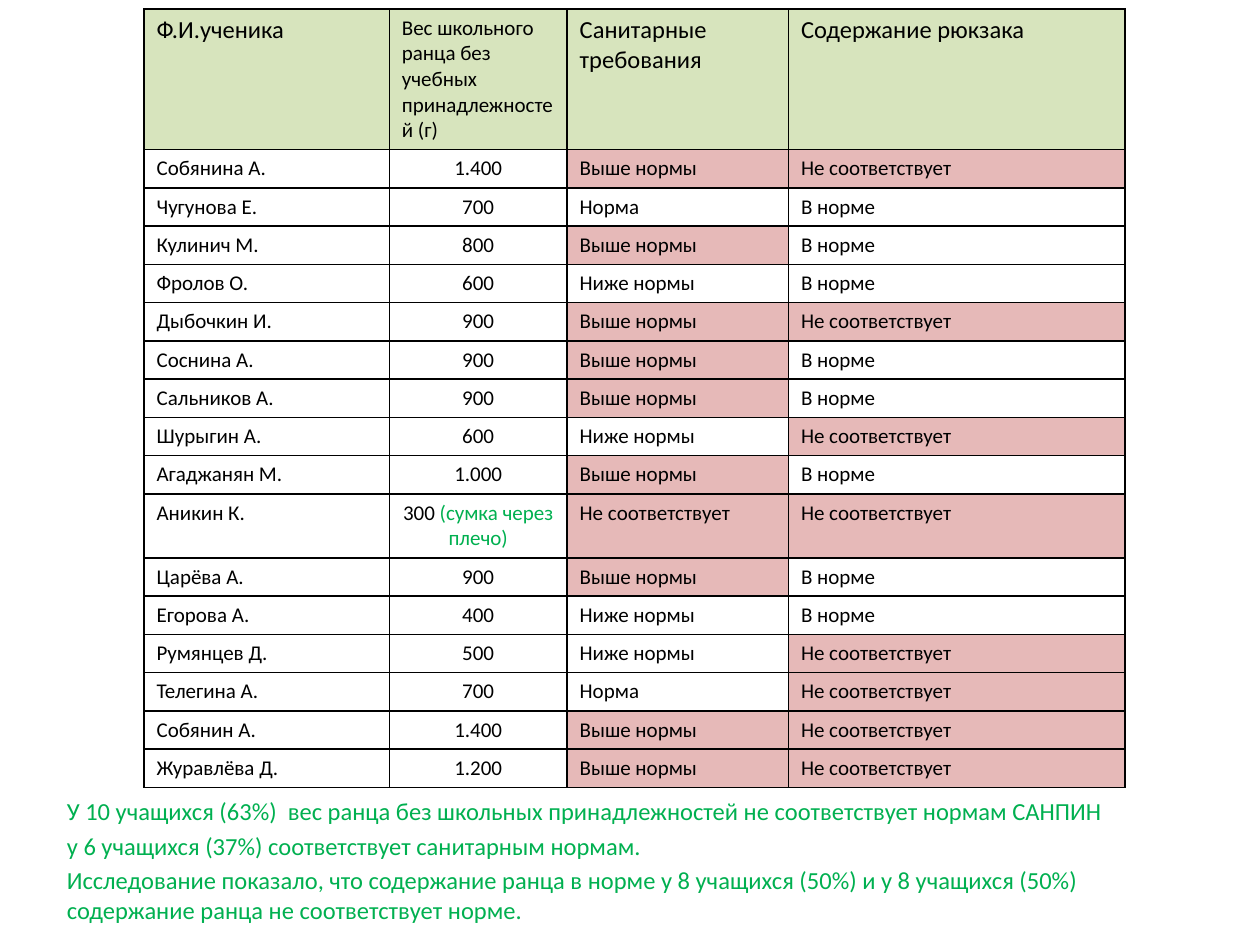
from dataclasses import dataclass

from lxml import etree
from pptx import Presentation
from pptx.dml.color import RGBColor
from pptx.enum import text
from pptx.oxml import ns
from pptx.util import Pt


@dataclass(frozen=True)
class Theme:
    font: str = "Calibri"
    large: float = 14
    small: float = 12
    ink: str = "000000"
    accent: str = "00B050"
    header: str = "D7E4BD"
    flagged: str = "E6B9B8"
    rule: float = 1


HEADERS = ["Ф.И.ученика", "Вес школьного ранца без учебных принадлежностей (г)",
           "Санитарные требования", "Содержание рюкзака"]
ABOVE, BELOW, NORMAL = "Выше нормы", "Ниже нормы", "Норма"
FITS, FAILS = "В норме", "Не соответствует"
PUPILS = [
    ("Собянина А.", "1.400", ABOVE, FAILS),
    ("Чугунова Е.", "700", NORMAL, FITS),
    ("Кулинич М.", "800", ABOVE, FITS),
    ("Фролов О.", "600", BELOW, FITS),
    ("Дыбочкин И.", "900", ABOVE, FAILS),
    ("Соснина А.", "900", ABOVE, FITS),
    ("Сальников А.", "900", ABOVE, FITS),
    ("Шурыгин А.", "600", BELOW, FAILS),
    ("Агаджанян М.", "1.000", ABOVE, FITS),
    ("Аникин К.", "300 |(сумка через плечо)", FAILS, FAILS),
    ("Царёва А.", "900", ABOVE, FITS),
    ("Егорова А.", "400", BELOW, FITS),
    ("Румянцев Д.", "500", BELOW, FAILS),
    ("Телегина А.", "700", NORMAL, FAILS),
    ("Собянин А.", "1.400", ABOVE, FAILS),
    ("Журавлёва Д.", "1.200", ABOVE, FAILS),
]
FINDINGS = [
    "У 10 учащихся (63%)  вес ранца без школьных принадлежностей не соответствует нормам САНПИН",
    "у 6 учащихся (37%) соответствует санитарным нормам.",
    "Исследование показало, что содержание ранца в норме у 8 учащихся (50%) "
    "и у 8 учащихся (50%) содержание ранца не соответствует норме.",
]


class SlideBuilder:
    """Draws styled elements on the current slide."""

    def __init__(self, deck, theme):
        self.theme = theme
        self.page = deck.slides.add_slide(deck.slide_layouts[1])
        title = self.page.shapes.title.element
        title.getparent().remove(title)

    def style(self, para, size, color):
        para.font.name = self.theme.font
        para.font.size = Pt(size)
        para.font.color.rgb = RGBColor.from_string(color)

    def body(self, lines, left, top, width, height):
        box = self.page.placeholders[1]
        box.left, box.top, box.width, box.height = map(Pt, (left, top, width, height))
        frame = box.text_frame
        frame.text = "\n".join(lines)
        frame.auto_size = text.MSO_AUTO_SIZE.NONE
        for para in frame.paragraphs:
            self.style(para, self.theme.large, self.theme.accent)
            properties = para._p.get_or_add_pPr()
            properties.set("marL", "0")
            properties.set("indent", "0")
            properties.insert_element_before(
                etree.SubElement(properties, ns.qn("a:buNone")), "a:defRPr")

    def border(self, cell):
        properties = cell._tc.get_or_add_tcPr()
        for side in ("lnL", "lnR", "lnT", "lnB"):
            line = etree.SubElement(properties, ns.qn(f"a:{side}"), w=str(Pt(self.theme.rule)))
            fill = etree.SubElement(line, ns.qn("a:solidFill"))
            etree.SubElement(fill, ns.qn("a:srgbClr"), val=self.theme.ink)

    def cell(self, cell, content, size, fill=None, centered=False):
        self.border(cell)
        if fill:
            cell.fill.solid()
            cell.fill.fore_color.rgb = RGBColor.from_string(fill)
        else:
            cell.fill.background()
        para = cell.text_frame.paragraphs[0]
        self.style(para, size, self.theme.ink)
        if centered:
            para.alignment = text.PP_ALIGN.CENTER
        value, _, remark = content.partition("|")
        para.add_run().text = value
        if remark:
            span = para.add_run()
            span.text = remark
            span.font.color.rgb = RGBColor.from_string(self.theme.accent)

    def table(self, headers, records, left, top, widths, heights):
        theme = self.theme
        grid = self.page.shapes.add_table(
            len(heights), len(widths), Pt(left), Pt(top), Pt(sum(widths)), Pt(sum(heights))).table
        grid.first_row = grid.horz_banding = False
        for column, width in zip(grid.columns, widths):
            column.width = Pt(width)
        for row, height in zip(grid.rows, heights):
            row.height = Pt(height)
        for index, label in enumerate(headers):
            size = theme.small if index == 1 else theme.large
            self.cell(grid.cell(0, index), label, size, theme.header)
        for number, record in enumerate(records, 1):
            for index, content in enumerate(record):
                fill = theme.flagged if content in (ABOVE, FAILS) else None
                self.cell(grid.cell(number, index), content, theme.small, fill, index == 1)


def main():
    deck = Presentation()
    deck.slide_width, deck.slide_height = Pt(720), Pt(540)
    slide = SlideBuilder(deck, Theme())
    slide.body(FINDINGS, 31, 451.5, 657.5, 88.5)
    heights = [75.6] + [34.6 if "|" in pupil[1] else 21.2 for pupil in PUPILS]
    slide.table(HEADERS, PUPILS, 82.3, 5.2, [140.2, 101.6, 126.5, 192.2], heights)
    deck.save("out.pptx")


if __name__ == "__main__":
    main()
